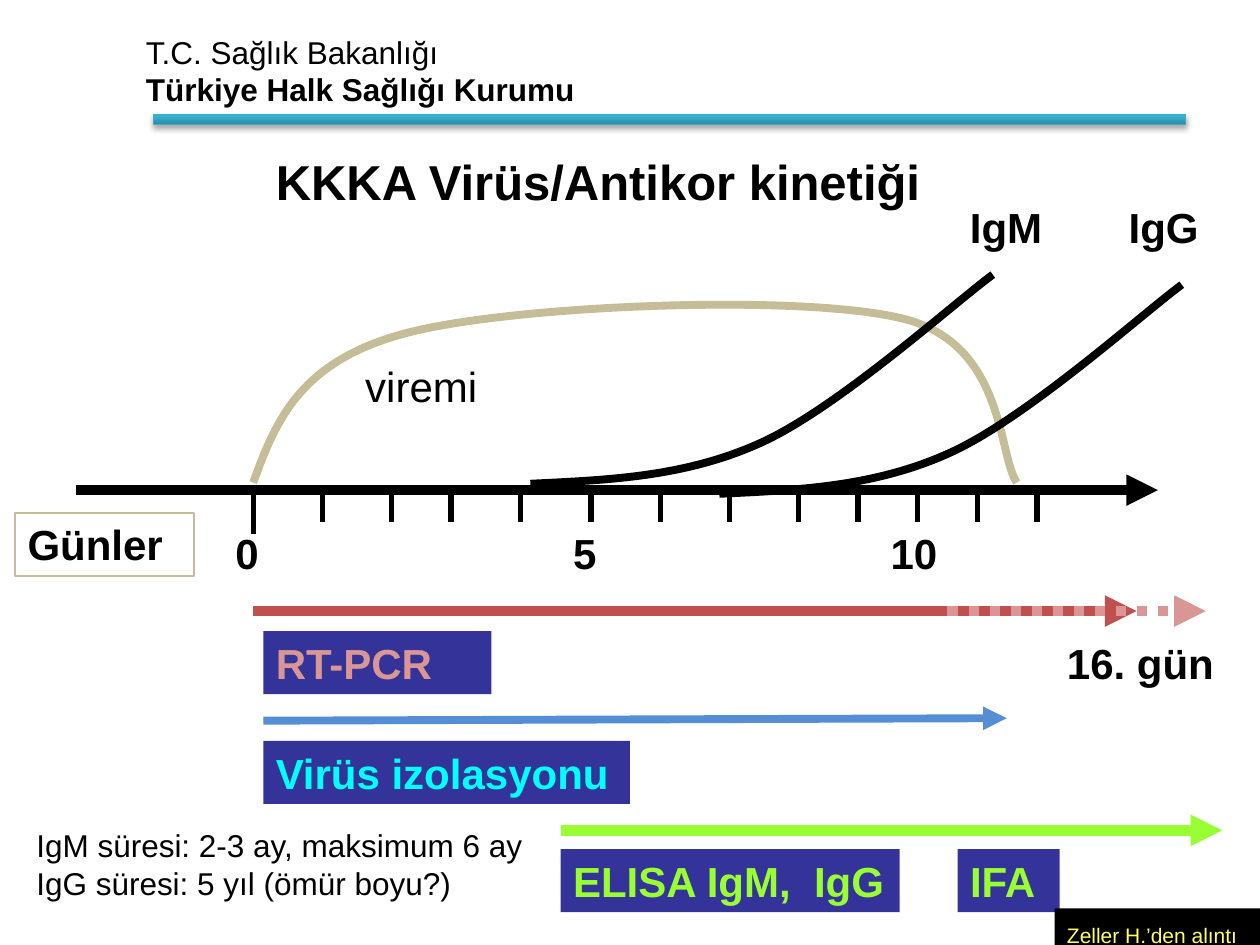
import pptx
import pptx.dml.color
import pptx.enum.dml
import pptx.enum.shapes
import pptx.enum.text
import pptx.oxml
import pptx.oxml.ns
import pptx.util
from pptx.util import Inches

RGBColor = pptx.dml.color.RGBColor
BLACK = RGBColor(0x00, 0x00, 0x00)
TAN = RGBColor(0xC4, 0xBD, 0x97)
RED = RGBColor(0xC0, 0x50, 0x4D)
PINK = RGBColor(0xD9, 0x96, 0x94)
BLUE = RGBColor(0x55, 0x8E, 0xD5)
GREEN = RGBColor(0x99, 0xFF, 0x33)
NAVY = RGBColor(0x33, 0x33, 0x99)
CYAN = RGBColor(0x00, 0xFF, 0xFF)
YELLOW = RGBColor(0xFF, 0xFF, 0x66)
BANNER_EDGE = RGBColor(0x46, 0xAA, 0xC5)

BANNER_STOPS = [(0, "2A88A2"), (80, "37B1D2"), (100, "34B4D6")]
AXIS_Y = 3.89
TICK_TOP = 3.91
DAY_TICKS = [2.56, 3.11, 3.58, 4.13, 4.69, 5.24, 5.79,
             6.34, 6.81, 7.28, 7.76, 8.23]

VIREMIA = [(2.01, 3.83),
           (2.19, 3.34), (2.38, 2.86), (3.24, 2.64),
           (4.1, 2.42), (6.37, 2.33), (7.17, 2.53),
           (7.98, 2.73), (7.92, 3.61), (8.07, 3.83)]
IGM = [(4.21, 3.84),
       (4.82, 3.81), (5.44, 3.79), (6.05, 3.51),
       (6.66, 3.23), (7.58, 2.4), (7.88, 2.18)]
IGG_SHIFT = (1.5, 0.08)


def drawing_xml(tag, content="", attributes=""):
    namespace = pptx.oxml.ns.nsdecls("a")
    return pptx.oxml.parse_xml(f"<a:{tag} {namespace} {attributes}>{content}</a:{tag}>")


def add_banner(slide):
    """Add the gradient rule with a soft shadow below the heading."""
    banner = slide.shapes.add_shape(
        pptx.enum.shapes.MSO_SHAPE.RECTANGLE,
        Inches(1.22), Inches(0.91), Inches(8.19), Inches(0.08))
    banner.line.color.rgb = BANNER_EDGE
    banner.line.width = pptx.util.Pt(0.75)
    stops = "".join(
        f'<a:gs pos="{percent * 1000}"><a:srgbClr val="{color}"/></a:gs>'
        for percent, color in BANNER_STOPS)
    gradient = drawing_xml("gradFill", f'<a:gsLst>{stops}</a:gsLst><a:lin ang="16200000"/>')
    properties = banner.element.spPr
    properties.insert_element_before(gradient, "a:ln")
    blur, distance = pptx.util.Pt(3.1), pptx.util.Pt(1.8)
    properties.append(drawing_xml(
        "effectLst",
        f'<a:outerShdw blurRad="{blur}" dist="{distance}" dir="5400000" rotWithShape="0">'
        '<a:srgbClr val="000000"><a:alpha val="35000"/></a:srgbClr></a:outerShdw>'))


def add_text(slide, lines, left, top, width, height=0.5, size=24, color=BLACK,
             bold=True, wrap=True, fill=None, border=None, spacing=None):
    """Add a text box with one paragraph per line and return its paragraphs."""
    box = slide.shapes.add_textbox(
        Inches(left), Inches(top), Inches(width), Inches(height))
    if fill is not None:
        box.fill.solid()
        box.fill.fore_color.rgb = fill
    if border is not None:
        box.line.color.rgb = border
        box.line.width = pptx.util.Pt(1)
    frame = box.text_frame
    frame.word_wrap = wrap
    frame.auto_size = pptx.enum.text.MSO_AUTO_SIZE.SHAPE_TO_FIT_TEXT
    frame.text = "\n".join(lines)
    for paragraph in frame.paragraphs:
        paragraph.font.name = "Arial"
        paragraph.font.size = pptx.util.Pt(size)
        paragraph.font.bold = bold
        paragraph.font.color.rgb = color
        if spacing:
            paragraph.line_spacing = spacing
    return frame.paragraphs


def add_line(slide, start, end, color=BLACK, width=6, arrow=True, dash=None):
    line = slide.shapes.add_connector(
        pptx.enum.shapes.MSO_CONNECTOR.STRAIGHT,
        *map(Inches, start), *map(Inches, end))
    line.line.color.rgb = color
    line.line.width = pptx.util.Pt(width)
    if dash is not None:
        line.line.dash_style = dash
    if arrow:
        line.line._get_or_add_ln().append(drawing_xml("tailEnd", attributes='type="triangle"'))
    line.element.spPr.append(drawing_xml("effectLst"))


def add_curve(slide, points, color):
    """Add an open Bezier curve: a start, then two handles and an end per segment."""
    start, *others = [(Inches(x), Inches(y)) for x, y in points]
    builder = slide.shapes.build_freeform(*start)
    builder.add_line_segments(others, close=False)
    curve = builder.convert_to_shape()
    curve.shadow.inherit = False
    curve.fill.background()
    curve.line.color.rgb = color
    curve.line.width = pptx.util.Pt(4.5)
    path = curve.element.xpath(".//a:path")[0]
    steps = path.findall(pptx.oxml.ns.qn("a:lnTo"))
    for first in range(0, len(steps), 3):
        segment = drawing_xml("cubicBezTo")
        for step in steps[first:first + 3]:
            segment.append(step[0])
            path.remove(step)
        path.append(segment)


def add_heading(slide):
    add_banner(slide)
    institution = add_text(
        slide, ["T.C. Sağlık Bakanlığı", "Türkiye Halk Sağlığı Kurumu"],
        1.06, 0.21, 6.85, 0.71, size=18, bold=False)
    institution[1].font.bold = True
    add_text(slide, ["KKKA Virüs/Antikor kinetiği"], 2.09, 1.15, 5.48, 0.57,
             size=28, wrap=False)


def add_day_axis(slide):
    add_line(slide, (0.6, AXIS_Y), (9.19, AXIS_Y))
    add_line(slide, (2.01, TICK_TOP), (2.01, 4.24), width=3, arrow=False)
    for x in DAY_TICKS:
        add_line(slide, (x, TICK_TOP), (x, 4.14), width=3, arrow=False)
    for day, left, width in [("0", 1.77, 0.39), ("5", 4.45, 0.47), ("10", 6.97, 0.63)]:
        add_text(slide, [day], left, 4.14, width)
    add_text(slide, ["Günler"], 0.12, 4.07, 1.42, border=TAN)


def add_kinetics(slide):
    add_curve(slide, VIREMIA, TAN)
    add_curve(slide, IGM, BLACK)
    shift_x, shift_y = IGG_SHIFT
    add_curve(slide, [(x + shift_x, y + shift_y) for x, y in IGM], BLACK)
    add_text(slide, ["viremi"], 2.8, 2.81, 1.09, bold=False, wrap=False)
    add_text(slide, ["IgM"], 7.6, 1.55, 0.8, wrap=False)
    add_text(slide, ["IgG"], 8.86, 1.55, 0.8, wrap=False)


def add_test_windows(slide):
    """Add the arrows and labels of the days on which each test is useful."""
    add_line(slide, (2.01, 4.85), (9.02, 4.85), RED)
    add_line(slide, (7.52, 4.85), (9.57, 4.85), PINK,
             dash=pptx.enum.dml.MSO_LINE.ROUND_DOT)
    add_line(slide, (2.09, 5.72), (7.99, 5.7), BLUE, width=4.5)
    add_line(slide, (4.45, 6.59), (9.7, 6.59), GREEN)
    add_text(slide, ["RT-PCR"], 2.09, 5.01, 1.81, color=PINK, fill=NAVY)
    add_text(slide, ["Virüs izolasyonu"], 2.09, 5.88, 2.91, color=CYAN, fill=NAVY)
    add_text(slide, ["ELISA IgM,  IgG"], 4.45, 6.74, 2.69, color=GREEN,
             fill=NAVY, wrap=False)
    add_text(slide, ["IFA"], 7.6, 6.74, 0.81, color=GREEN, fill=NAVY)
    add_text(slide, ["16. gün"], 8.37, 5.01, 1.43)


def add_notes_and_credit(slide):
    add_text(slide, ["IgM süresi: 2-3 ay, maksimum 6 ay", "IgG süresi: 5 yıl (ömür boyu?)"],
             0.19, 6.51, 4.1, 0.71, size=18, bold=False, wrap=False)
    add_text(slide, ["Zeller H.’den alıntı"], 8.37, 7.21, 1.63, 0.36, size=12,
             color=YELLOW, bold=False, fill=BLACK, spacing=1.3)


def main():
    presentation = pptx.Presentation()
    presentation.slide_width = Inches(10)
    presentation.slide_height = Inches(7.5)
    slide = presentation.slides.add_slide(presentation.slide_layouts[6])
    add_heading(slide)
    add_day_axis(slide)
    add_kinetics(slide)
    add_test_windows(slide)
    add_notes_and_credit(slide)
    presentation.save("out.pptx")


if __name__ == "__main__":
    main()
